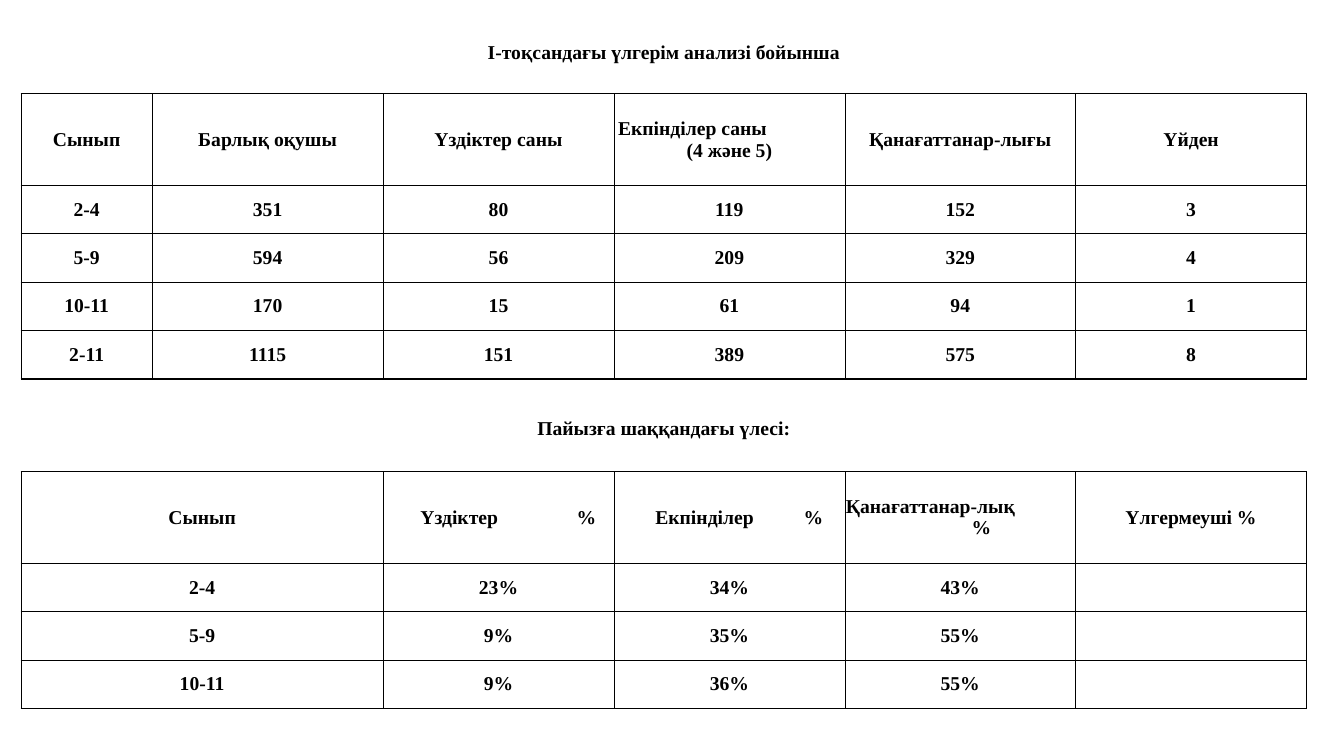
import lxml.etree
import pptx
import pptx.dml.color
import pptx.enum.text
import pptx.oxml.ns
import pptx.util
from pptx.util import Inches

COLORS = {"ink": "000000"}
FONT = "Times New Roman"
CENTER = pptx.enum.text.PP_ALIGN.CENTER
LEFT = pptx.enum.text.PP_ALIGN.LEFT
MIDDLE = pptx.enum.text.MSO_ANCHOR.MIDDLE
BOTTOM = pptx.enum.text.MSO_ANCHOR.BOTTOM
qn = pptx.oxml.ns.qn

COLUMN_WIDTHS = [1.3] + [2.29] * 5
ROW_HEIGHTS = [0.39, 0.21, 0.91] + [0.48] * 4 + [0.3, 0.3, 0.32, 0.91] + [0.48] * 3
TITLE_ROW, SHARE_TITLE_ROW = 0, 8
COUNT_ROWS = range(2, 7)
SHARE_ROWS = range(10, 14)

TEXTS = {
    0: ["І-тоқсандағы үлгерім анализі бойынша"],
    2: ["Сынып", "Барлық оқушы", "Үздіктер саны", "Екпінділер саны\n(4 және 5)",
        "Қанағаттанар-лығы", "Үйден"],
    3: ["2-4", "351", "80", "119", "152", "3"],
    4: ["5-9", "594", "56", "209", "329", "4"],
    5: ["10-11", "170", "15", "61", "94", "1"],
    6: ["2-11", "1115", "151", "389", "575", "8"],
    8: ["Пайызға шаққандағы үлесі:"],
    10: ["Сынып", "", "Үздіктер\t%", "Екпінділер\t%", "Қанағаттанар-лық\n%", "Үлгермеуші %"],
    11: ["2-4", "", "23%", "34%", "43%"],
    12: ["5-9", "", "9%", "35%", "55%"],
    13: ["10-11", "", "9%", "36%", "55%"],
}

# (row, column, paragraph): alignment, left margin, tab stop
PLACEMENTS = {
    (2, 3, 0): (LEFT, 0.04, None),
    (10, 2, 0): (LEFT, 0.37, 1.73),
    (10, 3, 0): (LEFT, 0.41, 1.68),
    (10, 4, 0): (LEFT, 0.01, None),
    (10, 4, 1): (CENTER, 0.42, None),
}


def horizontal_width(edge):
    """Width in points of the rule above row number edge, or 0 for none."""
    for block in (COUNT_ROWS, SHARE_ROWS):
        if edge in (block.start, block.stop):
            return 1
        if edge in block:
            return 0.5
    return 0


def add_border(cell, tag, width):
    properties = cell._tc.get_or_add_tcPr()
    line = lxml.etree.SubElement(properties, qn(tag), w=str(pptx.util.Pt(width)))
    if width:
        fill = lxml.etree.SubElement(line, qn("a:solidFill"))
        lxml.etree.SubElement(fill, qn("a:srgbClr"), val=COLORS["ink"])
    else:
        lxml.etree.SubElement(line, qn("a:noFill"))


deck = pptx.Presentation()
deck.slide_width, deck.slide_height = Inches(13.33), Inches(7.5)
page = deck.slides.add_slide(deck.slide_layouts[6])

table = page.shapes.add_table(
    len(ROW_HEIGHTS), len(COLUMN_WIDTHS), Inches(0.21), Inches(0.33),
    Inches(sum(COLUMN_WIDTHS)), Inches(sum(ROW_HEIGHTS))).table
table.first_row = False
table.horz_banding = False
for column, width in zip(table.columns, COLUMN_WIDTHS):
    column.width = Inches(width)
for row, height in zip(table.rows, ROW_HEIGHTS):
    row.height = Inches(height)

for row_index in (TITLE_ROW, SHARE_TITLE_ROW):
    table.cell(row_index, 0).merge(table.cell(row_index, 5))
for row_index in SHARE_ROWS:
    table.cell(row_index, 0).merge(table.cell(row_index, 1))

for row_index in range(len(ROW_HEIGHTS)):
    in_block = row_index in COUNT_ROWS or row_index in SHARE_ROWS
    texts = TEXTS.get(row_index, [])
    for column_index in range(len(COLUMN_WIDTHS)):
        cell = table.cell(row_index, column_index)
        cell.margin_left = cell.margin_right = cell.margin_top = cell.margin_bottom = 0
        cell.vertical_anchor = BOTTOM if row_index == SHARE_TITLE_ROW else MIDDLE

        left, right = [(1 if edge in (0, 6) else 0.5) if in_block else 0
                       for edge in (column_index, column_index + 1)]
        add_border(cell, "a:lnL", left)
        add_border(cell, "a:lnR", right)
        add_border(cell, "a:lnT", horizontal_width(row_index))
        add_border(cell, "a:lnB", horizontal_width(row_index + 1))
        cell.fill.background()

        text = texts[column_index] if column_index < len(texts) else ""
        if not text:
            # A small end mark lets the narrow spacer rows keep their height.
            para = cell.text_frame.paragraphs[0]
            lxml.etree.SubElement(para._p, qn("a:endParaRPr"), sz="1000")
            continue
        cell.text_frame.text = text
        for para_index, para in enumerate(cell.text_frame.paragraphs):
            para.alignment, margin, tab = PLACEMENTS.get(
                (row_index, column_index, para_index), (CENTER, 0, None))
            properties = para._p.get_or_add_pPr()
            properties.set("marL", str(Inches(margin)))
            if tab:
                tabs = lxml.etree.SubElement(properties, qn("a:tabLst"))
                lxml.etree.SubElement(tabs, qn("a:tab"), pos=str(Inches(tab)), algn="l")
            for span in para.runs:
                span.font.name = FONT
                span.font.size = pptx.util.Pt(14)
                span.font.bold = True
                span.font.color.rgb = pptx.dml.color.RGBColor.from_string(COLORS["ink"])

deck.save("out.pptx")
